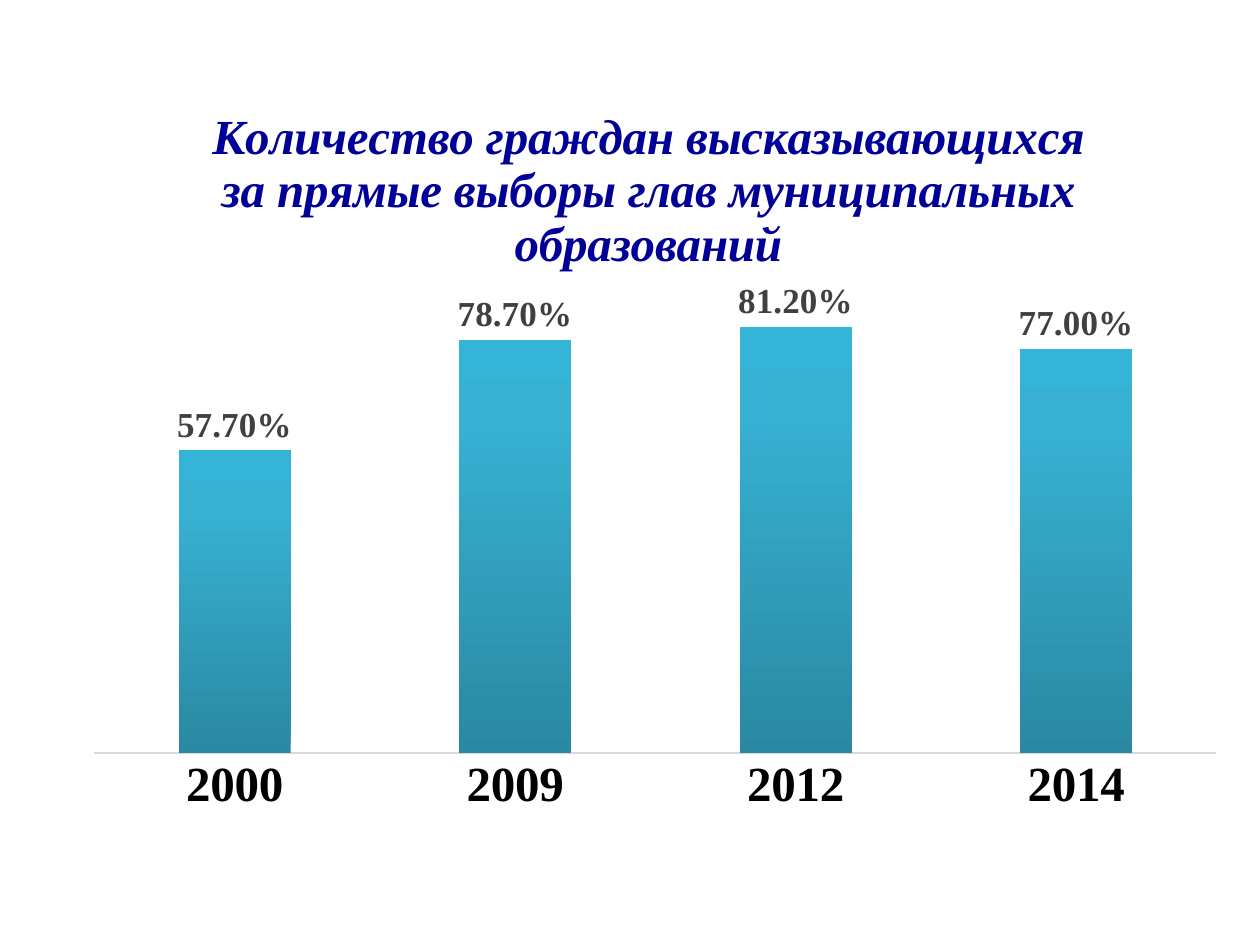
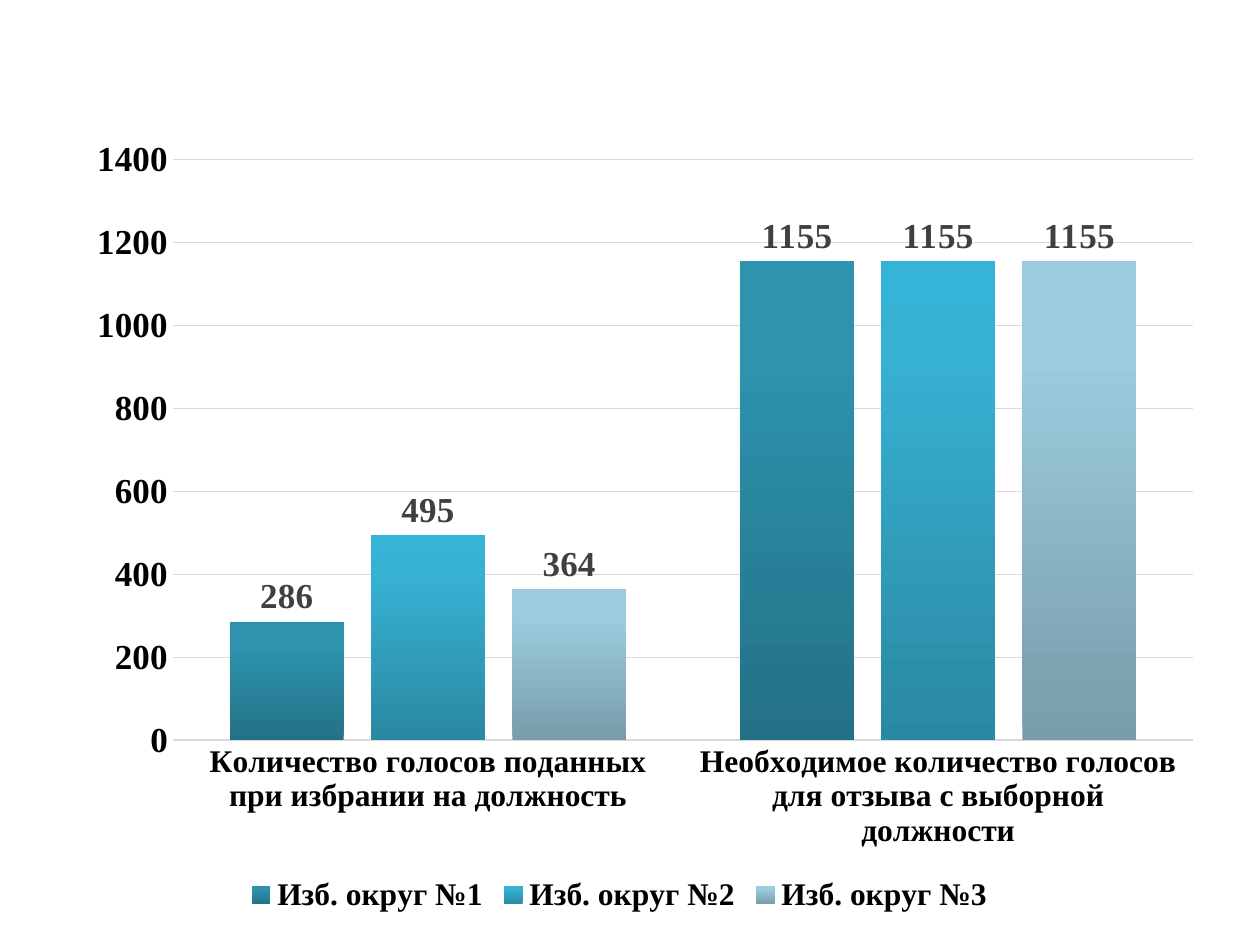
import dataclasses
from typing import Optional

import lxml.etree
import pptx
import pptx.chart.data
import pptx.dml.color
import pptx.enum.chart
import pptx.oxml
import pptx.oxml.ns
import pptx.util

Gradient = tuple[str, str, str]
Box = tuple[float, float, float, float]


# Shared look
@dataclasses.dataclass(frozen=True)
class Theme:
    width: float = 10
    height: float = 7.5
    base_font: str = "Calibri"
    base_size: int = 10
    font: str = "Times New Roman"
    title_size: int = 28
    value_size: int = 20
    legend_size: int = 18
    title: str = "000099"
    text: str = "000000"
    value: str = "404040"
    rule: str = "D9D9D9"
    stops: tuple[int, int, int] = (0, 80, 100)
    teal: Gradient = ("237186", "2D93AE", "2B95B1")
    cyan: Gradient = ("2A88A2", "37B1D2", "34B4D6")
    pale: Gradient = ("789CAA", "9CCBDD", "9CCDDF")


THEME = Theme()


@dataclasses.dataclass(frozen=True)
class Bars:
    name: str
    values: tuple[float, ...]
    gradient: Gradient


@dataclasses.dataclass(frozen=True)
class ColumnSlide:
    box: Box  # shares of the slide
    plot: Box  # shares of the chart
    categories: tuple[str, ...]
    bars: tuple[Bars, ...]
    gap: int
    overlap: int
    axis_max: float
    category_size: int
    number_format: str = "General"
    title: Optional[str] = None
    title_corner: tuple[float, float] = (0.12, 0.04)
    scale_step: Optional[float] = None  # None hides the value axis
    legend: bool = False


SLIDES = (
    ColumnSlide(
        box=(0.051, 0.069, 0.921, 0.819),
        plot=(0.026, 0.278, 0.967, 0.611),
        categories=("2000", "2009", "2012", "2014"),
        bars=(Bars("Series 1", (0.577, 0.787, 0.812, 0.77), THEME.cyan),),
        gap=150, overlap=-25, axis_max=0.9, category_size=28,
        number_format="0.00%",
        title="Количество граждан высказывающихся за прямые выборы "
              "глав муниципальных образований",
    ),
    ColumnSlide(
        box=(0.035, 0.048, 0.913, 0.924),
        plot=(0.112, 0.131, 0.887, 0.665),
        categories=("Количество голосов поданных при избрании на должность",
                    "Необходимое количество голосов для отзыва с выборной должности"),
        bars=(Bars("Изб. округ №1", (286, 1155), THEME.teal),
              Bars("Изб. округ №2", (495, 1155), THEME.cyan),
              Bars("Изб. округ №3", (364, 1155), THEME.pale)),
        gap=100, overlap=-24, axis_max=1400, category_size=18,
        scale_step=200, legend=True,
    ),
)


# Helpers
def rgb(color: str) -> pptx.dml.color.RGBColor:
    return pptx.dml.color.RGBColor.from_string(color)


def set_font(font, size: int, color: str = THEME.text, name: str = THEME.font,
             bold: bool = True, italic: bool = False) -> None:
    font.name, font.size = name, pptx.util.Pt(size)
    font.bold, font.italic = bold, italic
    font.color.rgb = rgb(color)


def set_line(line, width: float) -> None:
    line.color.rgb = rgb(THEME.rule)
    line.width = pptx.util.Pt(width)


def set_layout(parent, **settings) -> None:
    """Place a chart part by shares of the chart area."""
    layout = parent.find(pptx.oxml.ns.qn("c:layout"))
    if layout is None:
        layout = pptx.oxml.parse_xml(f'<c:layout {pptx.oxml.ns.nsdecls("c")}/>')
        parent.insert(0, layout)
    manual = lxml.etree.SubElement(layout, pptx.oxml.ns.qn("c:manualLayout"))
    for tag, value in settings.items():
        lxml.etree.SubElement(manual, pptx.oxml.ns.qn(f"c:{tag}")).set("val", str(value))


def fill_gradient(fill, colors: Gradient) -> None:
    """Run three colours from the foot of a column to its top."""
    fill.gradient()
    fill.gradient_angle = 90
    stop_list = fill.gradient_stops[0]._gs.getparent()
    for stop in list(stop_list):
        stop_list.remove(stop)
    for position, color in zip(THEME.stops, colors):
        stop_list.append(pptx.oxml.parse_xml(
            f'<a:gs {pptx.oxml.ns.nsdecls("a")} pos="{position * 1000}">'
            f'<a:srgbClr val="{color}"/></a:gs>'))


# Chart parts
def add_title(chart, text: str, corner: tuple[float, float]) -> None:
    frame = chart.chart_title.text_frame
    frame.text = text
    set_font(frame.paragraphs[0].font, THEME.title_size, THEME.title, italic=True)
    set_layout(chart.chart_title._element, xMode="edge", yMode="edge",
               x=corner[0], y=corner[1])


def style_axes(chart, content: ColumnSlide) -> None:
    no_tick = pptx.enum.chart.XL_TICK_MARK.NONE
    categories, scale = chart.category_axis, chart.value_axis
    for axis in (categories, scale):
        axis.major_tick_mark = axis.minor_tick_mark = no_tick
    set_font(categories.tick_labels.font, content.category_size)
    set_line(categories.format.line, 1)
    scale.minimum_scale, scale.maximum_scale = 0, content.axis_max
    scale.has_major_gridlines = content.scale_step is not None
    if content.scale_step is None:
        scale.visible = False
        return
    scale.major_unit = content.scale_step
    set_font(scale.tick_labels.font, THEME.value_size)
    scale.format.line.fill.background()
    set_line(scale.major_gridlines.format.line, 0.75)


def style_bars(plot, content: ColumnSlide) -> None:
    plot.gap_width, plot.overlap = content.gap, content.overlap
    plot.vary_by_categories = False
    for series, bars in zip(plot.series, content.bars):
        fill_gradient(series.format.fill, bars.gradient)
        series.format.line.fill.background()
        labels = series.data_labels
        labels.show_value = True
        labels.position = pptx.enum.chart.XL_LABEL_POSITION.OUTSIDE_END
        labels.number_format = content.number_format
        labels.number_format_is_linked = False
        set_font(labels.font, THEME.value_size, THEME.value)


def add_legend(chart) -> None:
    chart.has_legend = True
    chart.legend.position = pptx.enum.chart.XL_LEGEND_POSITION.BOTTOM
    chart.legend.include_in_layout = False
    set_font(chart.legend.font, THEME.legend_size)


def add_column_slide(deck, content: ColumnSlide) -> None:
    slide = deck.slides.add_slide(deck.slide_layouts[6])
    data = pptx.chart.data.CategoryChartData(number_format=content.number_format)
    data.categories = content.categories
    for bars in content.bars:
        data.add_series(bars.name, bars.values)
    sides = (deck.slide_width, deck.slide_height) * 2
    place = [int(share * side) for share, side in zip(content.box, sides)]
    chart = slide.shapes.add_chart(
        pptx.enum.chart.XL_CHART_TYPE.COLUMN_CLUSTERED, *place, data).chart
    set_font(chart.font, THEME.base_size, name=THEME.base_font, bold=False)
    chart.has_title = content.title is not None
    if content.title:
        add_title(chart, content.title, content.title_corner)
    style_axes(chart, content)
    style_bars(chart.plots[0], content)
    chart.has_legend = False
    if content.legend:
        add_legend(chart)
    left, top, width, height = content.plot
    set_layout(chart._chartSpace.chart.plotArea, layoutTarget="inner",
               xMode="edge", yMode="edge", x=left, y=top, w=width, h=height)


def main() -> None:
    deck = pptx.Presentation()
    deck.slide_width = pptx.util.Inches(THEME.width)
    deck.slide_height = pptx.util.Inches(THEME.height)
    for content in SLIDES:
        add_column_slide(deck, content)
    deck.save("out.pptx")


if __name__ == "__main__":
    main()
